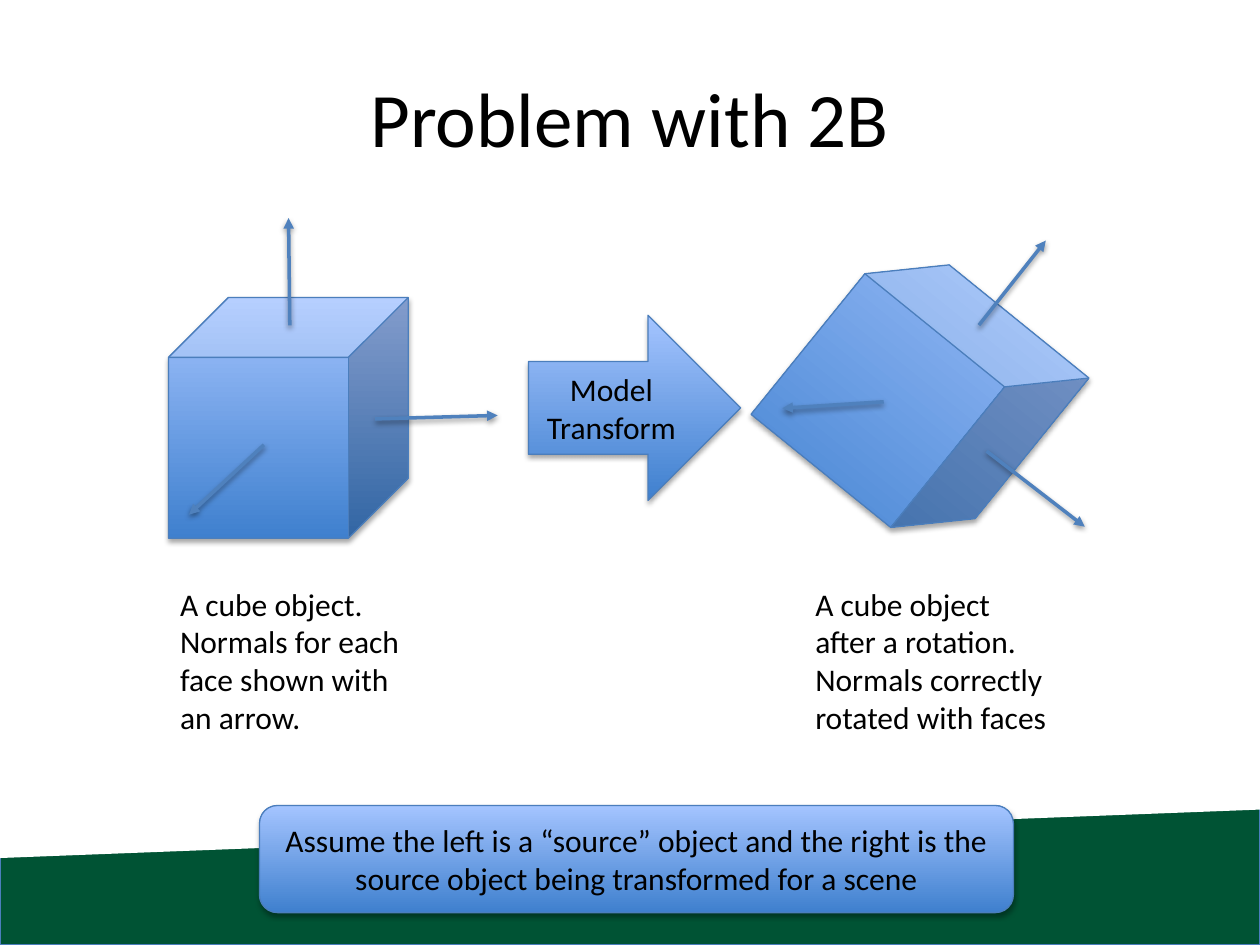
import lxml.etree
import pptx
import pptx.dml.color
import pptx.enum.shapes
import pptx.enum.text
import pptx.oxml
import pptx.oxml.ns
import pptx.util

Pt = pptx.util.Pt
SHAPE = pptx.enum.shapes.MSO_SHAPE
ALIGN = pptx.enum.text.PP_ALIGN
ANCHOR = pptx.enum.text.MSO_ANCHOR
BLACK = pptx.dml.color.RGBColor(0x00, 0x00, 0x00)
WHITE = pptx.dml.color.RGBColor(0xFF, 0xFF, 0xFF)
GREEN = pptx.dml.color.RGBColor(0x00, 0x53, 0x34)
OUTLINE = pptx.dml.color.RGBColor(0x4B, 0x7E, 0xBC)
ARROW = pptx.dml.color.RGBColor(0x4F, 0x81, 0xBD)
GRADIENT = [
    pptx.dml.color.RGBColor(0x3F, 0x80, 0xCE),
    pptx.dml.color.RGBColor(0xA4, 0xC4, 0xFF),
]


def outline_and_shadow(item, color, width, distance, opacity):
    item.line.color.rgb = color
    item.line.width = Pt(width)
    item._element.spPr.append(pptx.oxml.parse_xml(
        f'<a:effectLst {pptx.oxml.ns.nsdecls("a")}>'
        f'<a:outerShdw blurRad="{Pt(3.1)}" dist="{Pt(distance)}" dir="5400000" rotWithShape="0">'
        f'<a:srgbClr val="000000"><a:alpha val="{opacity * 1000}"/></a:srgbClr>'
        '</a:outerShdw></a:effectLst>'))


def write_text(item, text, size, align):
    item.text_frame.word_wrap = True
    item.text_frame.text = text
    for para in item.text_frame.paragraphs:
        para.alignment = align
        for span in para.runs:
            span.font.name = "Calibri"
            span.font.size = Pt(size)
            span.font.color.rgb = BLACK


deck = pptx.Presentation()
deck.slide_width, deck.slide_height = Pt(720), Pt(540)
page = deck.slides.add_slide(deck.slide_layouts[5])

title = page.shapes.title
title.left, title.top, title.width, title.height = Pt(36), Pt(21.6), Pt(648), Pt(90)
write_text(title, "Problem with 2B", 44, ALIGN.CENTER)
title.text_frame.vertical_anchor = ANCHOR.MIDDLE

band = page.shapes.add_shape(SHAPE.RECTANGLE, Pt(0), Pt(404), Pt(720), Pt(136))
band.fill.solid()
band.fill.fore_color.rgb = GREEN
outline_and_shadow(band, OUTLINE, 0.75, 1.8, 35)

slope = page.shapes.add_shape(SHAPE.PARALLELOGRAM, Pt(276.5), Pt(46.8), Pt(167), Pt(720))
slope.adjustments[0] = 0.166
slope.rotation = 90
slope._element.spPr.xfrm.set("flipH", "1")
slope.shadow.inherit = False
slope.fill.solid()
slope.fill.fore_color.rgb = WHITE
slope.line.fill.background()

for kind, left, top, width, height, rotation, text in [
    (SHAPE.CUBE, 96.3, 170, 137, 137.6, 0, ""),
    (SHAPE.CUBE, 457.2, 157.6, 137, 137.6, 39, ""),
    (SHAPE.ROUNDED_RECTANGLE, 148.3, 460.3, 430.8, 61.2, 0,
     "Assume the left is a “source” object and the right is the "
     "source object being transformed for a scene"),
    (SHAPE.RIGHT_ARROW, 302, 180.2, 121.2, 105.8, 0, "Model\nTransform"),
]:
    block = page.shapes.add_shape(kind, Pt(left), Pt(top), Pt(width), Pt(height))
    block.rotation = rotation
    block.fill.gradient()
    block.fill.gradient_angle = 90
    for stop, color, position in zip(block.fill.gradient_stops, GRADIENT, (0, 1)):
        stop.color.rgb = color
        stop.position = position
    outline_and_shadow(block, OUTLINE, 0.75, 1.8, 35)
    if text:
        write_text(block, text, 18, ALIGN.CENTER)
        block.text_frame.vertical_anchor = ANCHOR.MIDDLE

for start_x, start_y, end_x, end_y in [
    (165.6, 186, 164.9, 124.6),
    (214.4, 239.4, 284.4, 237.4),
    (150.8, 254.2, 108, 294.1),
    (559.4, 185.8, 597.6, 137.5),
    (563.8, 257.8, 619.9, 301),
    (505, 229.6, 447.1, 233.3),
]:
    normal = page.shapes.add_connector(
        pptx.enum.shapes.MSO_CONNECTOR.STRAIGHT,
        Pt(start_x), Pt(start_y), Pt(end_x), Pt(end_y))
    outline_and_shadow(normal, ARROW, 2, 1.6, 38)
    lxml.etree.SubElement(
        normal.line._get_or_add_ln(), pptx.oxml.ns.qn("a:tailEnd"), type="triangle")

for left, text in [
    (95.8, "A cube object.\nNormals for each face shown with an arrow."),
    (458.8, "A cube object after a rotation.\nNormals correctly rotated with faces"),
]:
    caption = page.shapes.add_textbox(Pt(left), Pt(330.5), Pt(152.6), Pt(94.5))
    write_text(caption, text, 18, ALIGN.LEFT)

deck.save("out.pptx")
